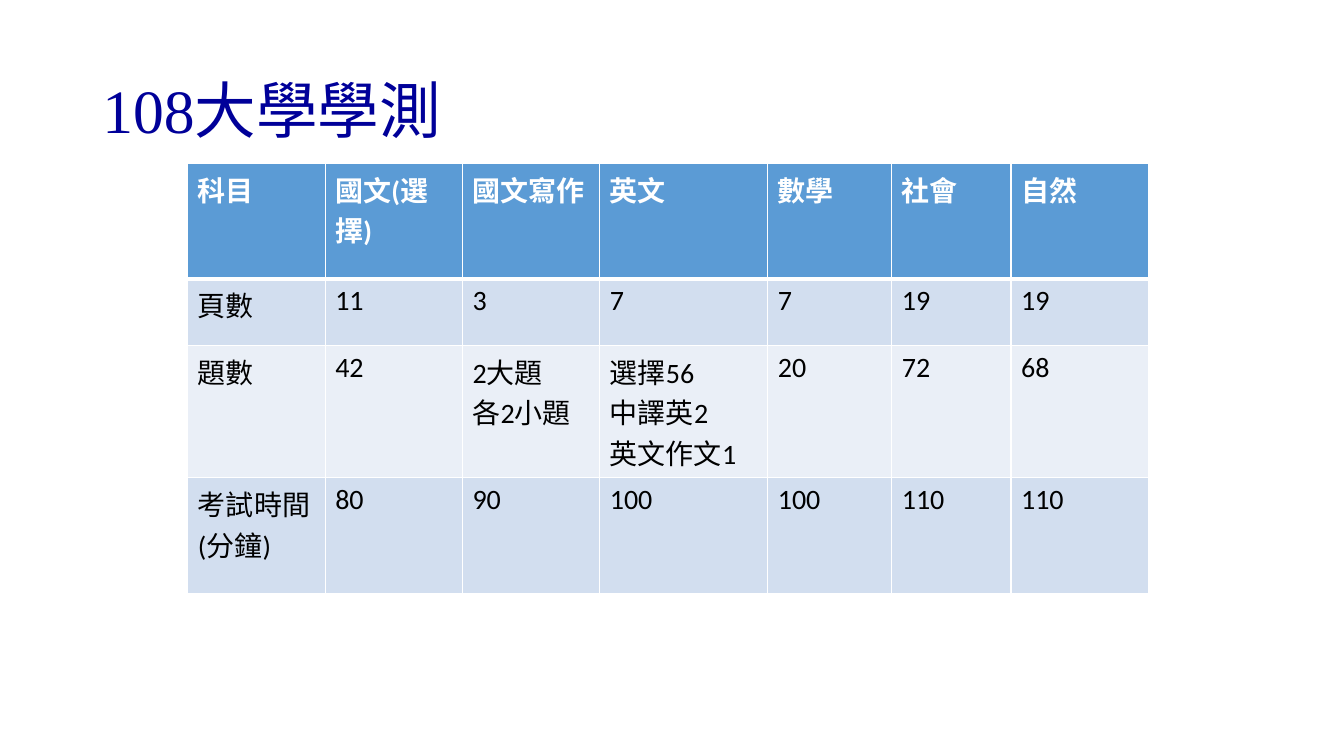
from dataclasses import dataclass

import lxml.etree
import pptx
import pptx.dml.color
import pptx.enum.text
import pptx.oxml.ns
import pptx.util

Pt = pptx.util.Pt


@dataclass(frozen=True)
class Theme:
    """Colours, fonts and type sizes of the slide."""

    title_color: str = "000099"
    header_fill: str = "5B9BD5"
    band_fills: tuple[str, str] = ("D2DEEF", "EAEFF7")
    header_color: str = "FFFFFF"
    body_color: str = "000000"
    rule_color: str = "FFFFFF"
    title_font: str = "Times New Roman"
    table_font: str = "Calibri"
    title_size: float = 44
    table_size: float = 20
    rule_width: float = 1
    header_rule_width: float = 3


@dataclass(frozen=True)
class ExamRow:
    """One table row: its height and the text of its cells."""

    height: float
    entries: tuple[str, ...]


THEME = Theme()
COLUMN_WIDTHS = (98.1, 98.1, 98.1, 120, 88.6, 85.2, 98.1)
EXAM_ROWS = (
    ExamRow(82.5, ("科目", "國文(選擇)", "國文寫作", "英文", "數學", "社會", "自然")),
    ExamRow(47.6, ("頁數", "11", "3", "7", "7", "19", "19")),
    ExamRow(94.5, ("題數", "42", "2大題\n各2小題", "選擇56\n中譯英2\n英文作文1", "20", "72", "68")),
    ExamRow(82.5, ("考試時間(分鐘)", "80", "90", "100", "100", "110", "110")),
)


def rgb(color: str) -> pptx.dml.color.RGBColor:
    """Turn a hex string into a colour."""
    return pptx.dml.color.RGBColor.from_string(color)


def write_text(frame, text: str, *, font: str, size: float, color: str,
               bold: bool = False, line_spacing: float | None = None) -> None:
    """Write each line of the text as a formatted paragraph."""
    frame.word_wrap = True
    frame.text = text
    for paragraph in frame.paragraphs:
        paragraph.line_spacing = line_spacing
        for run in paragraph.runs:
            run.font.name = font
            run.font.size = Pt(size)
            run.font.bold = bold
            run.font.color.rgb = rgb(color)


def rule_cell(cell, widths: dict[str, float]) -> None:
    """Draw the borders of a cell, given as side and width."""
    qn = pptx.oxml.ns.qn
    properties = cell._tc.get_or_add_tcPr()
    for side, width in widths.items():
        border = lxml.etree.SubElement(properties, qn(f"a:ln{side}"), w=str(Pt(width)))
        fill = lxml.etree.SubElement(border, qn("a:solidFill"))
        lxml.etree.SubElement(fill, qn("a:srgbClr"), val=THEME.rule_color)


def draw_title(slide, text: str) -> None:
    """Draw the slide title."""
    title = slide.shapes.add_textbox(Pt(66), Pt(28.75), Pt(828), Pt(104.4))
    title.text_frame.vertical_anchor = pptx.enum.text.MSO_ANCHOR.MIDDLE
    write_text(title.text_frame, text, font=THEME.title_font, size=THEME.title_size,
               color=THEME.title_color, line_spacing=0.9)


def draw_exam_table(slide, exam_rows: tuple[ExamRow, ...]) -> None:
    """Draw the table of subjects with a header and banded rows."""
    table = slide.shapes.add_table(
        len(exam_rows), len(COLUMN_WIDTHS), Pt(134.2), Pt(116.8),
        Pt(sum(COLUMN_WIDTHS)), Pt(sum(row.height for row in exam_rows))).table
    for column, width in zip(table.columns, COLUMN_WIDTHS):
        column.width = Pt(width)
    for row_index, exam_row in enumerate(exam_rows):
        table.rows[row_index].height = Pt(exam_row.height)
        is_header = row_index == 0
        band = THEME.band_fills[(row_index - 1) % 2]
        widths = dict.fromkeys("LRTB", THEME.rule_width)
        if row_index < 2:
            widths["B" if is_header else "T"] = THEME.header_rule_width
        for column_index, entry in enumerate(exam_row.entries):
            cell = table.cell(row_index, column_index)
            rule_cell(cell, widths)
            cell.fill.solid()
            cell.fill.fore_color.rgb = rgb(THEME.header_fill if is_header else band)
            write_text(cell.text_frame, entry, font=THEME.table_font,
                       size=THEME.table_size, bold=is_header,
                       color=THEME.header_color if is_header else THEME.body_color)


def main() -> None:
    """Build the slide and save it."""
    presentation = pptx.Presentation()
    presentation.slide_width = Pt(960)
    presentation.slide_height = Pt(540)
    slide = presentation.slides.add_slide(presentation.slide_layouts[6])
    draw_title(slide, "108大學學測")
    draw_exam_table(slide, EXAM_ROWS)
    presentation.save("out.pptx")


if __name__ == "__main__":
    main()
